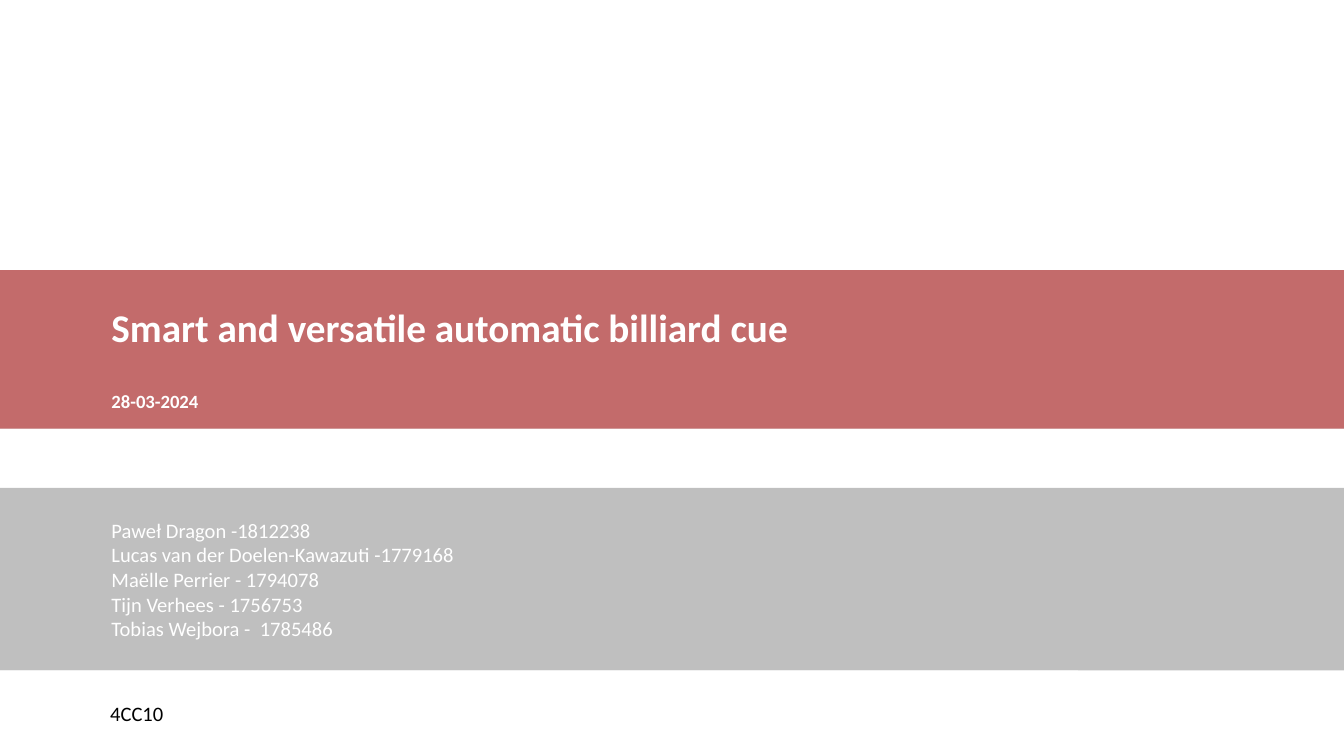
from lxml import etree
from pptx import Presentation
from pptx.dml.color import RGBColor
from pptx.enum.shapes import MSO_SHAPE
from pptx.enum.text import MSO_ANCHOR, PP_ALIGN
from pptx.oxml.ns import qn
from pptx.util import Inches, Pt

RECT = MSO_SHAPE.RECTANGLE
TOP, MIDDLE = MSO_ANCHOR.TOP, MSO_ANCHOR.MIDDLE
LEFT = PP_ALIGN.LEFT

BLACK = RGBColor(0x00, 0x00, 0x00)
WHITE = RGBColor(0xFF, 0xFF, 0xFF)
RED = RGBColor(0xC8, 0x19, 0x19)

FONT = "Calibri"
WIDTH = 10
HEIGHT = WIDTH * 9 / 16
MARGIN = 0.83
TITLE_RIGHT = 2.15

TITLE = "Smart and versatile automatic billiard cue"
DATE = "28-03-2024"
AUTHORS = [
    "Paweł Dragon -1812238",
    "Lucas van der Doelen-Kawazuti -1779168",
    "Maëlle Perrier - 1794078",
    "Tijn Verhees - 1756753",
    "Tobias Wejbora -  1785486",
]
COURSE = "4CC10"


def add_band(slide, x, y, w, h, color, opacity=100):
    """Add a borderless rectangle, optionally see-through."""
    s = slide.shapes.add_shape(RECT, Inches(x), Inches(y), Inches(w), Inches(h))
    s.shadow.inherit = False
    s.line.fill.background()
    s.fill.solid()
    s.fill.fore_color.rgb = color
    if opacity < 100:
        clr = s._element.spPr.find(qn("a:solidFill")).find(qn("a:srgbClr"))
        etree.SubElement(clr, qn("a:alpha")).set("val", str(opacity * 1000))
    return s


def set_lines(s, lines, size, color=WHITE, bold=False, anchor=MIDDLE,
              top=0, right=0, spacing=None):
    """Fill a band with left-aligned lines starting at the slide margin."""
    tf = s.text_frame
    tf.word_wrap = True
    tf.vertical_anchor = anchor
    tf.margin_left, tf.margin_right = Inches(MARGIN), Inches(right)
    tf.margin_top, tf.margin_bottom = Inches(top), 0
    tf.text = "\n".join(lines)
    for p in tf.paragraphs:
        p.alignment = LEFT
        if spacing:
            p.line_spacing = Pt(spacing)
        for r in p.runs:
            r.font.name = FONT
            r.font.size = Pt(size)
            r.font.bold = bold
            r.font.color.rgb = color


def add_title_block(slide, x, y, w, h, title_h):
    """Red title and date bands over one grey backing."""
    add_band(slide, x, y, w, h, BLACK, 25)
    title = add_band(slide, x, y, w, title_h, RED, 50)
    set_lines(title, [TITLE], 21, bold=True, right=TITLE_RIGHT, spacing=23)
    date = add_band(slide, x, y + title_h, w, h - title_h, RED, 50)
    set_lines(date, [DATE], 10, bold=True, anchor=TOP, top=0.02, right=TITLE_RIGHT)


def add_authors(slide, x, y, w, h):
    """Grey band listing the authors."""
    set_lines(add_band(slide, x, y, w, h, BLACK, 25), AUTHORS, 11)


def add_course(slide, x, y, w, h):
    """White footer band with the course code."""
    set_lines(add_band(slide, x, y, w, h, WHITE), [COURSE], 11, color=BLACK)


def main():
    prs = Presentation()
    prs.slide_width, prs.slide_height = Inches(WIDTH), Inches(HEIGHT)
    slide = prs.slides.add_slide(prs.slide_layouts[6])
    add_title_block(slide, 0, 2.01, WIDTH, 1.18, title_h=0.87)
    add_authors(slide, 0, 3.63, WIDTH, 1.36)
    add_course(slide, -0.01, 4.99, 8.03, HEIGHT - 4.99)
    prs.save("out.pptx")


if __name__ == "__main__":
    main()
